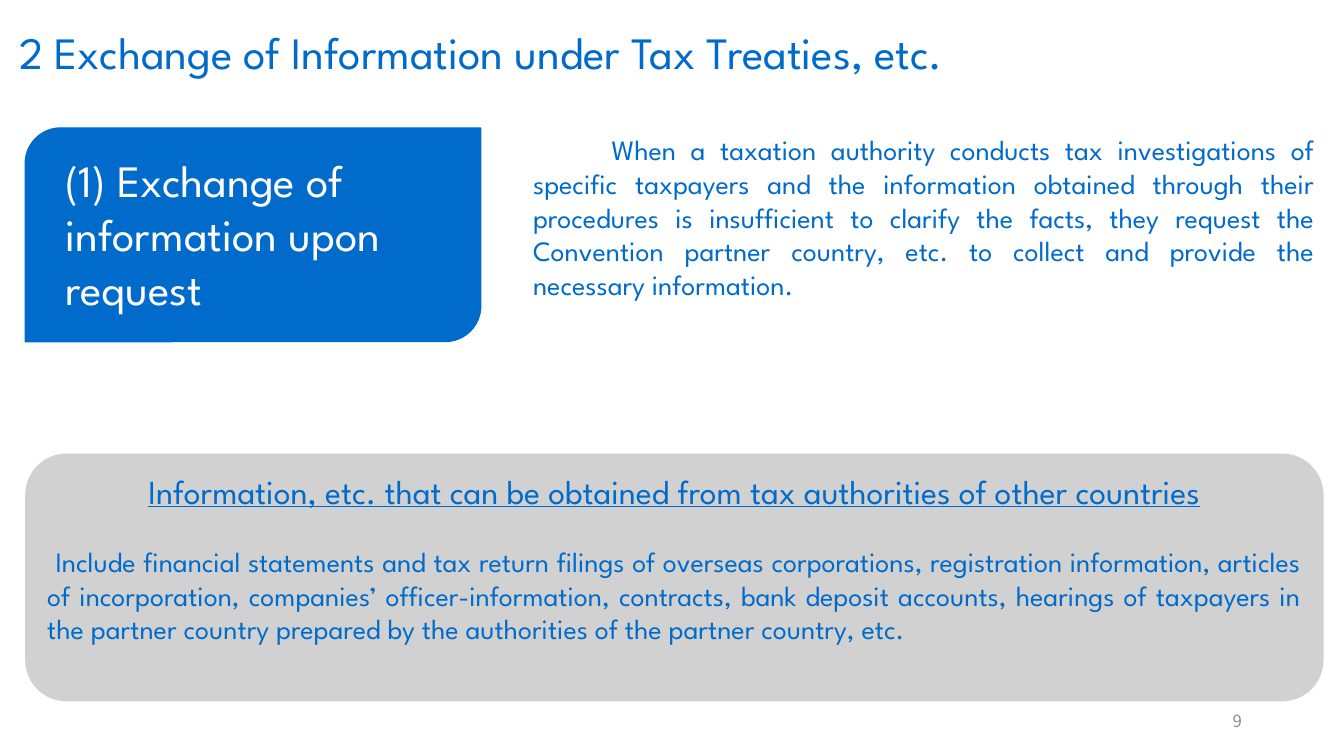
from lxml import etree
from pptx import Presentation
from pptx.dml.color import RGBColor
from pptx.enum.shapes import MSO_SHAPE as Preset
from pptx.enum.text import MSO_ANCHOR as Anchor, PP_ALIGN as Align
from pptx.oxml.ns import qn
from pptx.util import Pt

COLORS = {"blue": "006BCB", "white": "FFFFFF", "gray": "A5A5A5", "number": "8C8C8C"}
BODY_FONT, NUMBER_FONT = "League Spartan", "Noto Sans CJK JP"
BODY_SIZE, HEADING_SIZE, TITLE_SIZE = 20, 24, 32
PANEL_LEFT = 18

TITLE = "2 Exchange of Information under Tax Treaties, etc."
TOPIC = "(1) Exchange of information upon request"
EXPLANATION = (
    "When a taxation authority conducts tax investigations of specific taxpayers and the "
    "information obtained through their procedures is insufficient to clarify the facts, "
    "they request the Convention partner country, etc. to collect and provide the "
    "necessary information."
)
EXAMPLES_HEADING = "Information, etc. that can be obtained from tax authorities of other countries"
EXAMPLES = (
    "Include financial statements and tax return filings of overseas corporations, "
    "registration information, articles of incorporation, companies’ officer-information, "
    "contracts, bank deposit accounts, hearings of taxpayers in the partner country "
    "prepared by the authorities of the partner country, etc."
)
PAGE_NUMBER = "9"


def rgb(name):
    return RGBColor.from_string(COLORS[name])


def write(paragraph, text, size, color="blue", align=Align.LEFT, font=BODY_FONT, indent=0):
    paragraph.text = text
    paragraph.alignment = align
    if indent:
        paragraph._p.get_or_add_pPr().set("indent", str(Pt(indent)))
    for run in paragraph.runs:
        run.font.size = Pt(size)
        run.font.name = font
        run.font.color.rgb = rgb(color)
        properties = run._r.get_or_add_rPr()
        etree.SubElement(properties, qn("a:ea")).set("typeface", font)


def add_text(slide, box, text, size, wrap=True, anchor=Anchor.TOP, **style):
    text_box = slide.shapes.add_textbox(*map(Pt, box))
    text_frame = text_box.text_frame
    text_frame.word_wrap = wrap
    text_frame.vertical_anchor = anchor
    write(text_frame.paragraphs[0], text, size, **style)


def add_panel(slide, preset, box, color):
    shape = slide.shapes.add_shape(preset, *map(Pt, box))
    shape.shadow.inherit = False
    shape.fill.solid()
    shape.fill.fore_color.rgb = rgb(color)
    return shape


def add_examples(slide):
    panel = add_panel(slide, Preset.ROUNDED_RECTANGLE, (PANEL_LEFT, 324, 927.4, 177), "gray")
    panel.line.fill.background()
    fill_color = panel.fill._xPr.find(qn("a:solidFill"))[0]
    etree.SubElement(fill_color, qn("a:alpha")).set("val", "50000")

    text_frame = panel.text_frame
    text_frame.word_wrap = True
    text_frame.vertical_anchor = Anchor.TOP
    heading = text_frame.paragraphs[0]
    write(heading, EXAMPLES_HEADING, HEADING_SIZE, align=Align.CENTER)
    heading.runs[0].font.underline = True
    body = text_frame.add_paragraph()
    write(body, EXAMPLES, BODY_SIZE, align=Align.JUSTIFY, indent=6)
    body.space_before = Pt(24)


def main():
    presentation = Presentation()
    presentation.slide_width, presentation.slide_height = Pt(960), Pt(540)
    slide = presentation.slides.add_slide(presentation.slide_layouts[6])

    topic_panel = add_panel(
        slide, Preset.ROUND_2_DIAG_RECTANGLE, (PANEL_LEFT, 91.4, 325.4, 152.6), "blue"
    )
    topic_panel.line.color.rgb = rgb("blue")
    topic_panel.line.width = Pt(1)

    add_text(slide, (6.5, 14.4, 798.5, 46), TITLE, TITLE_SIZE, wrap=False)
    add_text(slide, (39.6, 105.8, 309.6, 123.8), TOPIC, TITLE_SIZE, color="white")
    add_text(slide, (373.7, 91.4, 572.4, 128.2), EXPLANATION, BODY_SIZE,
             align=Align.JUSTIFY, indent=56)
    add_examples(slide)
    add_text(slide, (678.2, 500.4, 216, 28.8), PAGE_NUMBER, 12, anchor=Anchor.MIDDLE,
             color="number", align=Align.RIGHT, font=NUMBER_FONT)

    presentation.save("out.pptx")


if __name__ == "__main__":
    main()
